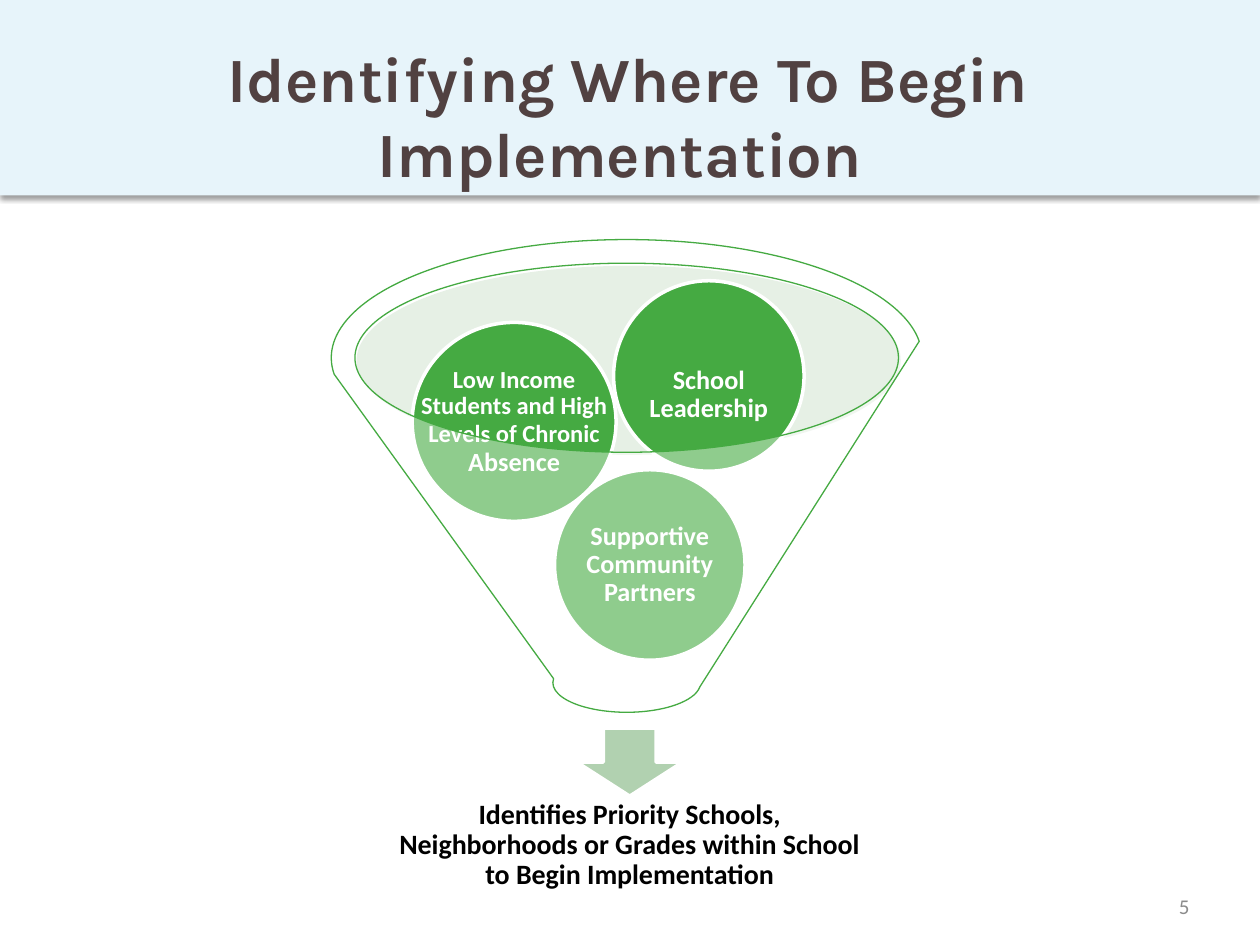
from lxml.etree import SubElement
from pptx import Presentation
from pptx.dml.color import RGBColor
from pptx.enum.shapes import MSO_SHAPE
from pptx.enum.text import MSO_ANCHOR, MSO_AUTO_SIZE, PP_ALIGN
from pptx.oxml.ns import qn
from pptx.util import Cm, Pt

COLOURS = {
    "band": "E7F4FA", "title": "514141", "number": "8C8C8C",
    "rim": "C1DAC0", "arrow": "B1D1B0", "green": "45AA42",
    "white": "FFFFFF", "black": "000000",
}


def colour(name):
    return RGBColor.from_string(COLOURS[name])


def write_text(shape, spans, size=15, font="Calibri", ink="white", bold=True,
               align=PP_ALIGN.CENTER, anchor=MSO_ANCHOR.MIDDLE, spacing=None, inset=(0.25, 0.13)):
    frame = shape.text_frame
    frame.word_wrap = True
    frame.auto_size = MSO_AUTO_SIZE.NONE
    frame.vertical_anchor = anchor
    frame.margin_left = frame.margin_right = Cm(inset[0])
    frame.margin_top = frame.margin_bottom = Cm(inset[1])
    para = frame.paragraphs[0]
    para.alignment = align
    para.space_before = Pt(0)
    para.line_spacing = spacing
    for words, span_size in [(spans, size)] if isinstance(spans, str) else spans:
        span = para.add_run()
        span.text = words
        span.font.size = Pt(span_size)
        span.font.name = font
        span.font.bold = bold
        span.font.color.rgb = colour(ink)


class FunnelSlide:
    """Hold the style and the current slide, and add its elements."""

    def __init__(self, deck):
        self.page = deck.slides.add_slide(deck.slide_layouts[5])

    def title(self, words, place):
        title = self.page.shapes.title
        title.left, title.top, title.width, title.height = map(Cm, place)
        write_text(title, words, size=36, font="Karla", ink="title", anchor=MSO_ANCHOR.TOP)

    def shape(self, kind, place, fill, line=None, width=2, opacity=None):
        shape = self.page.shapes.add_shape(kind, *map(Cm, place))
        shape.shadow.inherit = False
        shape.fill.solid()
        shape.fill.fore_color.rgb = colour(fill)
        if opacity:
            tint = shape.fill._xPr.find(qn("a:solidFill"))[0]
            SubElement(tint, qn("a:alpha"), val=str(opacity * 1000))
        if line:
            shape.line.color.rgb = colour(line)
            shape.line.width = Pt(width)
        else:
            shape.line.fill.background()
        return shape

    def band(self, place):
        band = self.shape(MSO_SHAPE.RECTANGLE, place, "band")
        effects = band.element.spPr.find(qn("a:effectLst"))
        shadow = SubElement(effects, qn("a:outerShdw"), blurRad=str(Pt(3.1)),
                            dist=str(Pt(1.6)), dir="5400000", rotWithShape="0")
        tint = SubElement(shadow, qn("a:srgbClr"), val=COLOURS["black"])
        SubElement(tint, qn("a:alpha"), val="38000")
        self.page.shapes.title.element.addprevious(band.element)

    def text(self, spans, place, **style):
        box = self.page.shapes.add_textbox(*map(Cm, place))
        write_text(box, spans, **style)

    def factor(self, spans, place, drop=0):
        self.shape(MSO_SHAPE.OVAL, place, "green", line="white")
        left, top, width, height = place
        self.text(spans, (left, top + drop, width, height), spacing=0.9, inset=(0.05, 0.05))


def main():
    deck = Presentation()
    deck.slide_width, deck.slide_height = Cm(25.4), Cm(19.05)
    slide = FunnelSlide(deck)
    slide.band((0, 0, 25.4, 3.94))
    slide.title("Identifying Where To Begin Implementation ", (0.84, 0.66, 23.62, 2.72))
    slide.text("5", (18.31, 17.75, 5.92, 1.02), size=12, ink="number", bold=False,
               align=PP_ALIGN.RIGHT)
    slide.shape(MSO_SHAPE.OVAL, (7.19, 5.36, 10.97, 3.81), "rim", opacity=40)
    slide.shape(MSO_SHAPE.DOWN_ARROW, (11.63, 14.68, 2.13, 1.37), "arrow", line="white")
    slide.text("Identifies Priority Schools, Neighborhoods or Grades within School "
               "to Begin Implementation", (7.59, 15.77, 10.21, 2.54),
               size=16, ink="black", spacing=0.9, inset=(0.3, 0.3))
    slide.factor("Supportive Community Partners", (11.18, 9.47, 3.84, 3.84))
    slide.factor([("Low Income Students and High Levels of Chronic", 14), (" Absence", 15)],
                 (8.31, 6.5, 4.11, 4.01))
    slide.factor("School Leadership", (12.37, 5.66, 3.84, 3.84), drop=0.39)
    slide.shape(MSO_SHAPE.FUNNEL, (6.68, 4.83, 11.91, 9.53), "white",
                line="green", width=0.75, opacity=40)
    deck.save("out.pptx")


if __name__ == "__main__":
    main()
